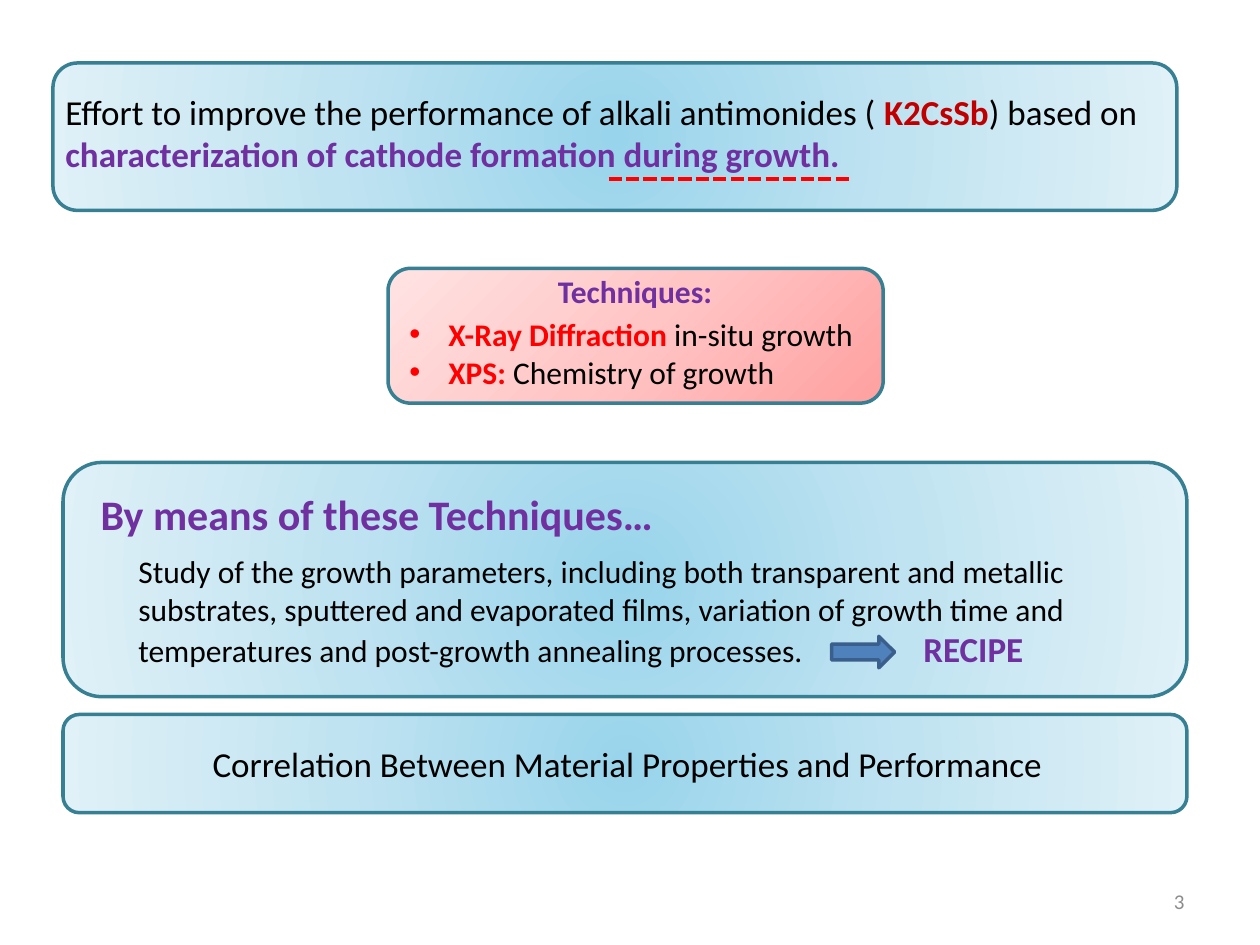
from dataclasses import dataclass

from lxml import etree
from pptx import Presentation
from pptx.dml.color import RGBColor
from pptx.enum.dml import MSO_LINE
from pptx.enum.shapes import MSO_CONNECTOR, MSO_SHAPE
from pptx.enum.text import MSO_ANCHOR, PP_ALIGN
from pptx.oxml import parse_xml
from pptx.oxml.ns import nsdecls, qn
from pptx.util import Inches, Pt

ROUND, ARROW = MSO_SHAPE.ROUNDED_RECTANGLE, MSO_SHAPE.RIGHT_ARROW
LEFT, CENTER, RIGHT = PP_ALIGN.LEFT, PP_ALIGN.CENTER, PP_ALIGN.RIGHT
TOP, MIDDLE = MSO_ANCHOR.TOP, MSO_ANCHOR.MIDDLE
FONT = "Calibri"
COLORS = {
    "black": "000000", "purple": "7030A0", "red": "FF0000", "dark_red": "C00000",
    "gray": "8C8C8C", "border": "377F92", "arrow": "4F81BD", "arrow_line": "3A5F8C",
}
# Gradient stops at 0, 50 and 100 percent, and the direction of each
BLUE = ("98D4EB", "C0E3F1", "E0F1F7")
PINK = ("FFA0A0", "FFC5C5", "FFE3E3")
RADIAL = ('<a:path path="circle"><a:fillToRect l="50000" t="50000" '
          'r="50000" b="50000"/></a:path>')
DIAGONAL = '<a:lin ang="13500000" scaled="0"/>'


@dataclass
class Box:
    x: float
    y: float
    w: float
    h: float

    def emu(self) -> tuple:
        return tuple(Inches(v) for v in (self.x, self.y, self.w, self.h))


@dataclass
class Panel:
    box: Box
    stops: tuple = BLUE
    direction: str = RADIAL


@dataclass
class Run:
    text: str
    size: int
    color: str = "black"
    bold: bool = False


@dataclass
class Label:
    box: Box
    paragraphs: list
    align: int = LEFT
    anchor: int = TOP
    wrap: bool = True
    bullet: bool = False
    tab: float = 0


PANELS = [
    Panel(Box(0.42, 0.5, 8.92, 1.17)),
    Panel(Box(3.08, 2.13, 3.93, 1.07), PINK, DIAGONAL),
    Panel(Box(0.5, 3.67, 8.92, 1.86)),
    Panel(Box(0.5, 5.67, 8.92, 0.78)),
]

LABELS = [
    # Goal
    Label(Box(0.42, 0.67, 9, 0.92), [[
        Run("Effort to improve the performance of alkali antimonides ( ", 20),
        Run("K2CsSb", 20, "dark_red", True),
        Run(") based on ", 20),
        Run("characterization of cathode formation during growth.", 20, "purple", True),
    ]]),
    # Techniques
    Label(Box(4.33, 2.11, 1.43, 0.4), [[Run("Techniques:", 18, "purple", True)]],
          wrap=False),
    Label(Box(3.15, 2.45, 3.78, 0.71), [
        [Run("X-Ray Diffraction ", 18, "red", True), Run("in-situ growth", 18)],
        [Run("XPS: ", 18, "red", True), Run("Chemistry of growth", 18)],
    ], wrap=False, bullet=True),
    # Study
    Label(Box(0.7, 3.83, 4.71, 0.5),
          [[Run("By means of these Techniques…", 24, "purple", True)]], wrap=False),
    Label(Box(1, 4.33, 8.08, 1.04), [[
        Run("Study of the growth parameters, including both transparent and metallic "
            "substrates, sputtered and evaporated films, variation of growth time and "
            "temperatures and post-growth annealing processes.", 18),
        Run("\tRECIPE", 20, "purple", True),
    ]], tab=6.23),
    # Correlation
    Label(Box(1.12, 5.84, 7.72, 0.44),
          [[Run("Correlation Between Material Properties and Performance", 20)]],
          align=CENTER),
    # Slide number
    Label(Box(7.17, 6.95, 2.33, 0.4), [[Run("3", 12, "gray")]],
          align=RIGHT, anchor=MIDDLE),
]


def rgb(name: str) -> RGBColor:
    return RGBColor.from_string(COLORS[name])


def add_shape(s, kind, box: Box, line: str):
    sp = s.shapes.add_shape(kind, *box.emu())
    sp.shadow.inherit = False
    sp.line.color.rgb = rgb(line)
    sp.line.width = Pt(2)
    return sp


def add_panel(s, panel: Panel) -> None:
    sp = add_shape(s, ROUND, panel.box, "border")
    stops = "".join(f'<a:gs pos="{i * 50000}"><a:srgbClr val="{c}"/></a:gs>'
                    for i, c in enumerate(panel.stops))
    grad = parse_xml(f'<a:gradFill {nsdecls("a")} rotWithShape="1">'
                     f'<a:gsLst>{stops}</a:gsLst>{panel.direction}</a:gradFill>')
    sp.fill.background()
    pr = sp._element.spPr
    pr.replace(pr.find(qn("a:noFill")), grad)


def add_label(s, label: Label) -> None:
    tf = s.shapes.add_textbox(*label.box.emu()).text_frame
    tf.word_wrap = label.wrap
    tf.vertical_anchor = label.anchor
    for i, runs in enumerate(label.paragraphs):
        p = tf.add_paragraph() if i else tf.paragraphs[0]
        p.alignment = label.align
        pr = p._p.get_or_add_pPr()
        if label.bullet:
            pr.set("marL", str(Inches(0.31)))
            pr.set("indent", str(Inches(-0.31)))
            etree.SubElement(pr, qn("a:buFont"), typeface="Arial")
            etree.SubElement(pr, qn("a:buChar"), char="•")
        if label.tab:
            tabs = etree.SubElement(pr, qn("a:tabLst"))
            etree.SubElement(tabs, qn("a:tab"), pos=str(Inches(label.tab)), algn="l")
        for run in runs:
            r = p.add_run()
            r.text = run.text
            r.font.name = FONT
            r.font.size = Pt(run.size)
            r.font.bold = run.bold
            r.font.color.rgb = rgb(run.color)


def add_underline(s, x1: float, x2: float, y: float) -> None:
    ln = s.shapes.add_connector(MSO_CONNECTOR.STRAIGHT, Inches(x1), Inches(y),
                                Inches(x2), Inches(y))
    ln.line.color.rgb = rgb("red")
    ln.line.width = Pt(2.5)
    ln.line.dash_style = MSO_LINE.SQUARE_DOT
    etree.SubElement(ln._element.spPr, qn("a:effectLst"))


def main() -> None:
    prs = Presentation()
    prs.slide_width, prs.slide_height = Inches(10), Inches(7.5)
    s = prs.slides.add_slide(prs.slide_layouts[6])
    for panel in PANELS:
        add_panel(s, panel)
    for label in LABELS:
        add_label(s, label)

    # Arrow to the recipe
    arrow = add_shape(s, ARROW, Box(6.6, 5.05, 0.5, 0.25), "arrow_line")
    arrow.fill.solid()
    arrow.fill.fore_color.rgb = rgb("arrow")

    # Emphasis under "during growth"
    add_underline(s, 4.83, 6.75, 1.42)
    prs.save("out.pptx")


if __name__ == "__main__":
    main()
